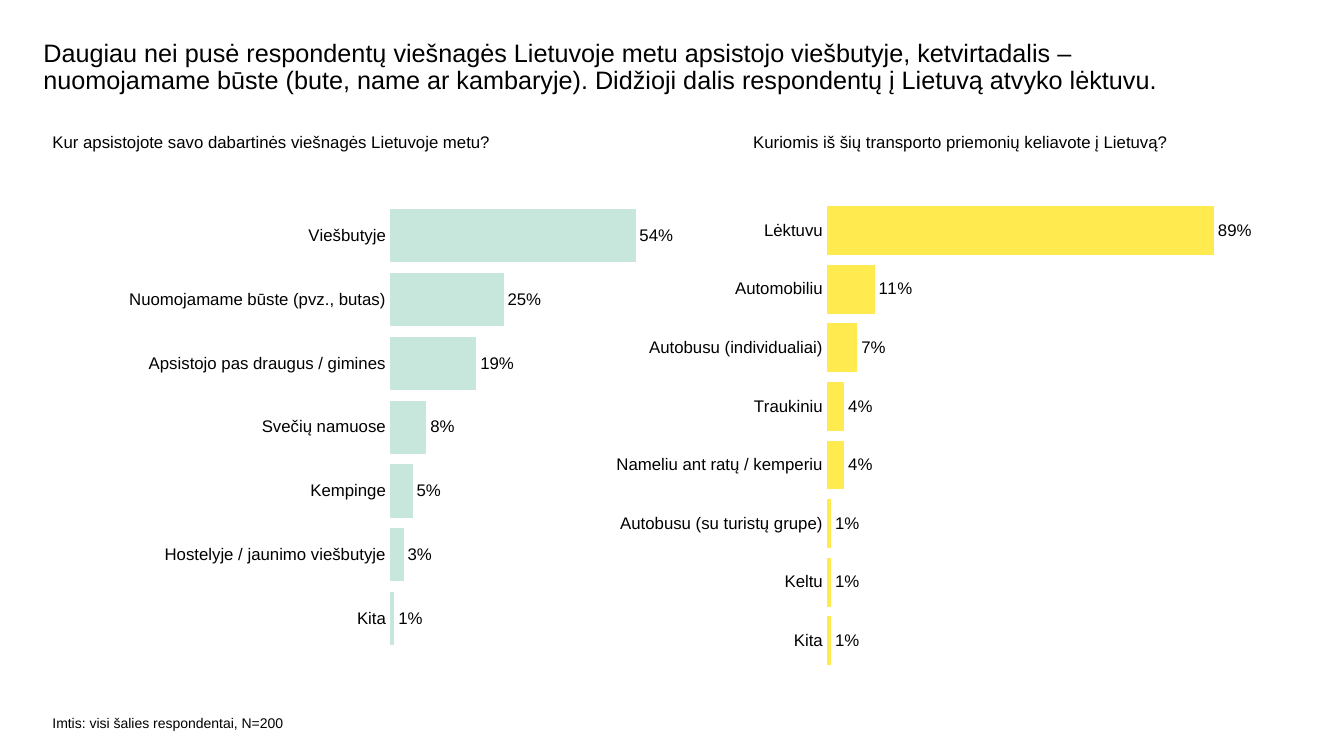
import dataclasses

import lxml.etree
import pptx
import pptx.chart.data
import pptx.dml.color
import pptx.enum.chart
import pptx.oxml.ns
import pptx.util

Inches = pptx.util.Inches
BLACK = pptx.dml.color.RGBColor(0x00, 0x00, 0x00)
MINT = pptx.dml.color.RGBColor(0xC7, 0xE6, 0xDC)
YELLOW = pptx.dml.color.RGBColor(0xFF, 0xEB, 0x50)
FONT = "Arial"

Box = tuple[float, float, float, float]


@dataclasses.dataclass
class Label:
    text: str
    box: Box
    size: int
    lead: float = 1.0


@dataclasses.dataclass
class Bars:
    box: Box
    plot: Box  # inner plot area, as fractions of the chart
    top: float  # end of the value axis
    color: pptx.dml.color.RGBColor
    data: dict[str, float]


LABELS = [
    Label("Daugiau nei pusė respondentų viešnagės Lietuvoje metu apsistojo "
          "viešbutyje, ketvirtadalis – nuomojamame būste (bute, name ar "
          "kambaryje). Didžioji dalis respondentų į Lietuvą atvyko lėktuvu.",
          (0.43, 0.4, 11.25, 0.86), 18, 0.9),
    Label("Kur apsistojote savo dabartinės viešnagės Lietuvoje metu?",
          (0.52, 1.31, 6.5, 0.61), 12),
    Label("Kuriomis iš šių transporto priemonių keliavote į Lietuvą?",
          (7.47, 1.31, 5.21, 0.61), 12),
    Label("Imtis: visi šalies respondentai, N=200",
          (0.52, 7.09, 2.53, 0.24), 10),
]

CHARTS = [
    Bars((0, 1.87, 6.87, 4.94), (0.563, 0.031, 0.394, 0.897), 0.6, MINT, {
        "Viešbutyje": 0.54,
        "Nuomojamame būste (pvz., butas)": 0.25,
        "Apsistojo pas draugus / gimines": 0.19,
        "Svečių namuose": 0.08,
        "Kempinge": 0.05,
        "Hostelyje / jaunimo viešbutyje": 0.03,
        "Kita": 0.01,
    }),
    Bars((5.98, 1.9, 6.69, 4.84), (0.332, 0.02, 0.645, 0.961), 1.0, YELLOW, {
        "Lėktuvu": 0.89,
        "Automobiliu": 0.11,
        "Autobusu (individualiai)": 0.07,
        "Traukiniu": 0.04,
        "Nameliu ant ratų / kemperiu": 0.04,
        "Autobusu (su turistų grupe)": 0.01,
        "Keltu": 0.01,
        "Kita": 0.01,
    }),
]


def apply(item: object, form: dict[str, object]) -> None:
    for name, value in form.items():
        setattr(item, name, value)


def style(font: object, size: int) -> None:
    apply(font, {"name": FONT, "size": pptx.util.Pt(size)})
    font.color.rgb = BLACK


def add_label(slide: object, label: Label) -> None:
    frame = slide.shapes.add_textbox(*map(Inches, label.box)).text_frame
    apply(frame, {"word_wrap": True, "margin_left": 0, "margin_top": 0,
                  "margin_right": 0, "margin_bottom": 0})
    para = frame.paragraphs[0]
    para.line_spacing = label.lead
    run = para.add_run()
    run.text = label.text
    style(run.font, label.size)


def set_plot(chart: object, plot: Box) -> None:
    qn = pptx.oxml.ns.qn
    area = chart.element.find(".//" + qn("c:plotArea"))
    for old in area.findall(qn("c:layout")):
        area.remove(old)
    layout = lxml.etree.Element(qn("c:layout"))
    area.insert(0, layout)
    manual = lxml.etree.SubElement(layout, qn("c:manualLayout"))
    parts = {"layoutTarget": "inner", "xMode": "edge", "yMode": "edge"}
    parts |= dict(zip("xywh", map(str, plot)))
    for name, value in parts.items():
        lxml.etree.SubElement(manual, qn("c:" + name)).set("val", value)


def add_bars(slide: object, bars: Bars) -> None:
    enum = pptx.enum.chart
    data = pptx.chart.data.CategoryChartData(number_format="0%")
    data.categories = list(bars.data)
    data.add_series("Series 1", list(bars.data.values()))
    chart = slide.shapes.add_chart(enum.XL_CHART_TYPE.BAR_CLUSTERED,
                                   *map(Inches, bars.box), data).chart
    apply(chart, {"has_title": False, "has_legend": False})
    style(chart.font, 12)
    set_plot(chart, bars.plot)

    # Axes
    cat = chart.category_axis
    apply(cat, {"reverse_order": True, "has_major_gridlines": False,
                "major_tick_mark": enum.XL_TICK_MARK.NONE,
                "minor_tick_mark": enum.XL_TICK_MARK.NONE})
    cat.format.line.fill.background()
    style(cat.tick_labels.font, 12)
    apply(chart.value_axis, {"visible": False, "has_major_gridlines": False,
                             "minimum_scale": 0, "maximum_scale": bars.top})

    # Bars and their values
    plot = chart.plots[0]
    apply(plot, {"gap_width": 20, "vary_by_categories": False,
                 "has_data_labels": True})
    fill = plot.series[0].format.fill
    fill.solid()
    fill.fore_color.rgb = bars.color
    apply(plot.data_labels, {
        "show_value": True, "number_format": "0%",
        "number_format_is_linked": False,
        "position": enum.XL_LABEL_POSITION.OUTSIDE_END})
    style(plot.data_labels.font, 12)


def main() -> None:
    deck = pptx.Presentation()
    apply(deck, {"slide_width": Inches(13.33), "slide_height": Inches(7.5)})
    slide = deck.slides.add_slide(deck.slide_layouts[6])
    for label in LABELS:
        add_label(slide, label)
    for bars in CHARTS:
        add_bars(slide, bars)
    deck.save("out.pptx")


if __name__ == "__main__":
    main()
